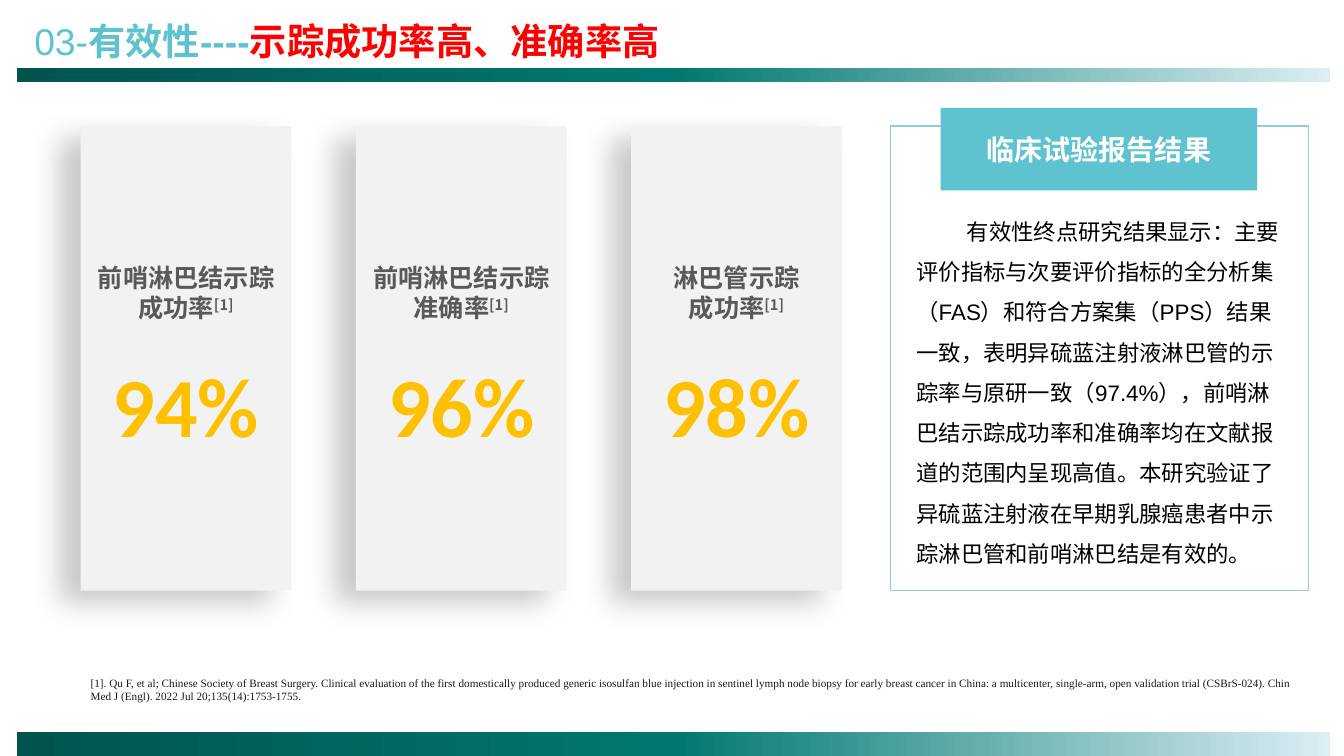
import dataclasses

import pptx
import pptx.dml.color
import pptx.enum.shapes
import pptx.enum.text
import pptx.oxml
import pptx.oxml.ns
import pptx.util

Inches = pptx.util.Inches
Pt = pptx.util.Pt
PP_ALIGN = pptx.enum.text.PP_ALIGN
MSO_ANCHOR = pptx.enum.text.MSO_ANCHOR
MSO_AUTO_SIZE = pptx.enum.text.MSO_AUTO_SIZE


@dataclasses.dataclass(frozen=True)
class Theme:
    accent: str = "5EC2CF"
    highlight: str = "FF0000"
    card: str = "F2F2F2"
    label: str = "595959"
    rate: str = "FFC000"
    frame: str = "93CDDD"
    body: str = "000000"
    heading: str = "FFFFFF"
    note: str = "191919"
    band: tuple = ((0, "00544E"), (50, "00786F"), (100, "DBEEF4"))
    latin: str = "Arial"
    cjk: str = "Noto Sans CJK JP"
    rate_font: str = "Calibri"
    note_font: str = "Times New Roman"
    title_size: float = 26.6
    label_size: float = 18
    rate_size: float = 60
    heading_size: float = 20
    body_size: float = 16
    note_size: float = 8


THEME = Theme()

SECTION, TOPIC, CLAIM = "03-", "有效性----", "示踪成功率高、准确率高"
CARDS = [
    ("前哨淋巴结示踪", "成功率", "94%"),
    ("前哨淋巴结示踪", "准确率", "96%"),
    ("淋巴管示踪", "成功率", "98%"),
]
CITATION = "[1]"
REPORT_HEADING = "临床试验报告结果"
REPORT_BODY = (
    "有效性终点研究结果显示：主要评价指标与次要评价指标的全分析集（FAS）和符合方案集（PPS）结果一致，"
    "表明异硫蓝注射液淋巴管的示踪率与原研一致（97.4%），前哨淋巴结示踪成功率和准确率均在文献报道的范围内呈现高值。"
    "本研究验证了异硫蓝注射液在早期乳腺癌患者中示踪淋巴管和前哨淋巴结是有效的。"
)
REFERENCE = (
    "[1]. Qu F, et al; Chinese Society of Breast Surgery. Clinical evaluation of the first "
    "domestically produced generic isosulfan blue injection in sentinel lymph node biopsy for early "
    "breast cancer in China: a multicenter, single-arm, open validation trial (CSBrS-024). "
    "Chin Med J (Engl). 2022 Jul 20;135(14):1753-1755."
)

BANDS = [(0.67, 0.14), (7.26, 0.27)]
BAND_LEFT, BAND_WIDTH = 0.17, 13.02
CARD_LEFT, CARD_STEP, CARD_WIDTH = 0.8, 2.73, 2.09
PANEL_TOP, PANEL_HEIGHT = 1.25, 4.61


def rgb(code):
    return pptx.dml.color.RGBColor.from_string(code)


def xml(markup):
    return pptx.oxml.parse_xml(markup.replace(">", " " + pptx.oxml.ns.nsdecls("a") + ">", 1))


def add_run(paragraph, text, size, color, font=THEME.latin, bold=False):
    run = paragraph.add_run()
    run.text = text
    run.font.size = Pt(size)
    run.font.bold = bold
    run.font.color.rgb = rgb(color)
    run.font.name = font
    run.font._element.append(xml(f'<a:ea><!-- --></a:ea>'.replace("<!-- -->", "")))
    run.font._element[-1].set("typeface", THEME.cjk)
    return run


def add_box(slide, place, fill=None, line=None):
    box = slide.shapes.add_shape(
        pptx.enum.shapes.MSO_SHAPE.RECTANGLE, *(Inches(length) for length in place)
    )
    box.shadow.inherit = False
    if fill:
        box.fill.solid()
        box.fill.fore_color.rgb = rgb(fill)
    else:
        box.fill.background()
    if line:
        box.line.color.rgb = rgb(line)
        box.line.width = Pt(1)
    else:
        box.line.fill.background()
    box.text_frame.word_wrap = True
    box.text_frame.vertical_anchor = MSO_ANCHOR.MIDDLE
    return box


def add_text(slide, place):
    frame = slide.shapes.add_textbox(*(Inches(length) for length in place)).text_frame
    frame.word_wrap = True
    return frame


def add_band(slide, top, height):
    band = add_box(slide, (BAND_LEFT, top, BAND_WIDTH, height))
    band.fill.gradient()
    band.fill.gradient_angle = 0
    stops = band._element.spPr.find(".//" + pptx.oxml.ns.qn("a:gsLst"))
    for stop in list(stops):
        stops.remove(stop)
    for position, color in THEME.band:
        stops.append(xml(f'<a:gs pos="{position * 1000}"><a:srgbClr val="{color}"/></a:gs>'))


def add_shadow(box):
    effects = box._element.spPr.find(pptx.oxml.ns.qn("a:effectLst"))
    effects.append(xml(
        f'<a:outerShdw blurRad="{Pt(21)}" dist="{Pt(17)}" dir="{150 * 60000}" algn="ctr" '
        'rotWithShape="0"><a:srgbClr val="000000"><a:alpha val="21000"/></a:srgbClr></a:outerShdw>'
    ))


def add_card(slide, index, subject, measure, rate):
    left = CARD_LEFT + index * CARD_STEP
    card = add_box(slide, (left, PANEL_TOP, CARD_WIDTH, PANEL_HEIGHT), THEME.card)
    add_shadow(card)
    frame = card.text_frame
    subject_line, measure_line, rate_line = (
        frame.paragraphs[0], frame.add_paragraph(), frame.add_paragraph()
    )
    for line in frame.paragraphs:
        line.alignment = PP_ALIGN.CENTER
    label = (THEME.label_size, THEME.label, THEME.cjk, True)
    add_run(subject_line, subject, *label)
    add_run(measure_line, measure, *label)
    citation = add_run(measure_line, CITATION, *label)
    citation.font._element.set("baseline", "30000")
    rate_line.space_before = Pt(22)
    add_run(rate_line, rate, THEME.rate_size, THEME.rate, THEME.rate_font, True)


def add_title(slide):
    title = slide.shapes.title
    title.left, title.top = Inches(0.24), Inches(0.13)
    title.width, title.height = Inches(10.65), Inches(0.55)
    frame = title.text_frame
    frame.word_wrap = True
    frame.auto_size = MSO_AUTO_SIZE.SHAPE_TO_FIT_TEXT
    frame.vertical_anchor = MSO_ANCHOR.TOP
    heading = frame.paragraphs[0]
    heading.alignment = PP_ALIGN.LEFT
    add_run(heading, SECTION, THEME.title_size, THEME.accent)
    add_run(heading, TOPIC, THEME.title_size, THEME.accent, bold=True)
    add_run(heading, CLAIM, THEME.title_size, THEME.highlight, bold=True)


def add_report(slide):
    add_box(slide, (8.83, PANEL_TOP, 4.15, PANEL_HEIGHT), line=THEME.frame)
    body = add_text(slide, (8.99, 1.98, 3.89, 3.8)).paragraphs[0]
    body.line_spacing = 1.5
    body._p.get_or_add_pPr().set("indent", str(Inches(0.5)))
    add_run(body, REPORT_BODY, THEME.body_size, THEME.body)
    heading = add_box(slide, (9.33, 1.07, 3.14, 0.82), THEME.accent).text_frame.paragraphs[0]
    heading.alignment = PP_ALIGN.CENTER
    add_run(heading, REPORT_HEADING, THEME.heading_size, THEME.heading, bold=True)


def main():
    deck = pptx.Presentation()
    deck.slide_width, deck.slide_height = Inches(13.33), Inches(7.5)
    slide = deck.slides.add_slide(deck.slide_layouts[5])
    for top, height in BANDS:
        add_band(slide, top, height)
    add_title(slide)
    for index, card in enumerate(CARDS):
        add_card(slide, index, *card)
    add_report(slide)
    reference = add_text(slide, (0.8, 6.66, 12.18, 0.37))
    reference.auto_size = MSO_AUTO_SIZE.SHAPE_TO_FIT_TEXT
    add_run(reference.paragraphs[0], REFERENCE, THEME.note_size, THEME.note, THEME.note_font)
    deck.save("out.pptx")


if __name__ == "__main__":
    main()
